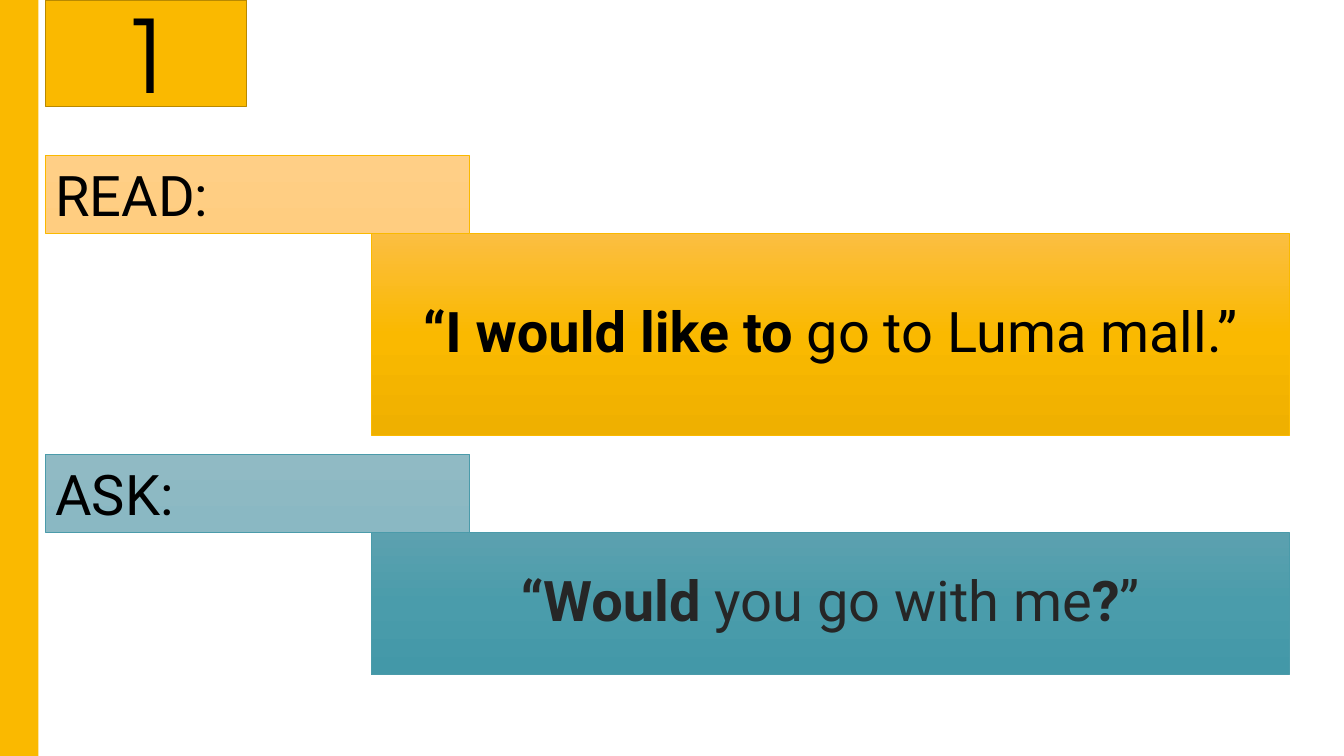
from dataclasses import dataclass

from lxml import etree
from pptx import Presentation
from pptx import util as u
from pptx.dml.color import RGBColor
from pptx.enum import shapes, text
from pptx.oxml import ns


@dataclass(frozen=True)
class Theme:
    amber: str = "FAB900"
    amber_edge: str = "B98900"
    teal_edge: str = "4B9BAA"
    black: str = "000000"
    charcoal: str = "262626"
    read_label: tuple = ("FFCF86", "FFCD80")
    read_panel: tuple = ("FBBE41", "FAB900", "EFB000")
    ask_label: tuple = ("90BAC4", "8AB8C3")
    ask_panel: tuple = ("5CA1AF", "4A9CAB", "4398A8")
    number_font: str = "TeX Gyre Adventor"
    body_font: str = "Roboto"
    number_size: int = 72
    body_size: int = 40


THEME = Theme()


def place(shape, box):
    shape.left, shape.top, shape.width, shape.height = (u.Cm(length) for length in box)


def add_rectangle(slide, box):
    shape = slide.shapes.add_shape(shapes.MSO_SHAPE.RECTANGLE, *(u.Cm(length) for length in box))
    shape.shadow.inherit = False
    return shape


def paint(shape, colors, edge=None, edge_width=0.5):
    if len(colors) == 1:
        shape.fill.solid()
        shape.fill.fore_color.rgb = RGBColor.from_string(colors[0])
    else:
        shape.fill.gradient()
        shape.fill.gradient_angle = 270
        stops = shape._element.spPr.find(".//" + ns.qn("a:gsLst"))
        for stop in list(stops):
            stops.remove(stop)
        for index, color in enumerate(colors):
            position = str(100000 * index // (len(colors) - 1))
            stop = etree.SubElement(stops, ns.qn("a:gs"), pos=position)
            etree.SubElement(stop, ns.qn("a:srgbClr"), val=color)
    if edge:
        shape.line.color.rgb = RGBColor.from_string(edge)
        shape.line.width = u.Pt(edge_width)
    else:
        shape.line.fill.background()


def write(shape, runs, color, align, anchor, font=THEME.body_font, size=THEME.body_size,
          inset=None, spacing=1.0):
    frame = shape.text_frame
    frame.word_wrap = True
    frame.auto_size = text.MSO_AUTO_SIZE.NONE
    frame.vertical_anchor = anchor
    if inset is not None:
        frame.margin_left = frame.margin_right = u.Cm(inset)
        frame.margin_top = frame.margin_bottom = u.Cm(inset)
    paragraph = frame.paragraphs[0]
    paragraph.alignment = align
    paragraph.line_spacing = spacing
    for words, bold in runs:
        run = paragraph.add_run()
        run.text = words
        run.font.name = font
        run.font.size = u.Pt(size)
        run.font.bold = bold
        run.font.color.rgb = RGBColor.from_string(color)


def add_side_band(slide, box):
    paint(add_rectangle(slide, box), [THEME.amber])


def add_number(slide, box, number):
    shape = add_rectangle(slide, box)
    paint(shape, [THEME.amber], THEME.amber_edge, 1)
    write(shape, [(number, False)], THEME.black, text.PP_ALIGN.CENTER,
          text.MSO_ANCHOR.MIDDLE, THEME.number_font, THEME.number_size)


def add_prompt(slide, box, label, runs, label_colors, panel_colors, edge, color, panel=None):
    left, top, width, height = box
    label_width, label_height, indent = 10.69, 1.97, 8.2
    tab = add_rectangle(slide, (left, top, label_width, label_height))
    paint(tab, label_colors, edge)
    write(tab, [(label, False)], THEME.black, text.PP_ALIGN.LEFT, text.MSO_ANCHOR.TOP)

    panel_box = (left + indent, top + label_height, width - indent, height - label_height)
    if panel is None:
        panel = add_rectangle(slide, panel_box)
    else:
        place(panel, panel_box)
    paint(panel, panel_colors, edge)
    write(panel, runs, color, text.PP_ALIGN.CENTER, text.MSO_ANCHOR.MIDDLE,
          inset=0.5, spacing=0.9)


def build_dialogue_slide(presentation):
    slide = presentation.slides.add_slide(presentation.slide_layouts[5])
    left, width = 1.15, 31.34
    add_side_band(slide, (-0.05, 0, 1.02, 19.1))
    add_number(slide, (left, 0, 5.06, 2.68), "1")
    add_prompt(slide, (left, 3.92, width, 7.05), "READ:",
               [("“I would like to", True), (" go to Luma mall.”", False)],
               THEME.read_label, THEME.read_panel, THEME.amber, THEME.black,
               slide.shapes.title)
    add_prompt(slide, (left, 11.45, width, 5.55), "ASK:",
               [("“Would", True), (" you go with me", False), ("?", True), ("”", False)],
               THEME.ask_label, THEME.ask_panel, THEME.teal_edge, THEME.charcoal)


def main():
    presentation = Presentation()
    presentation.slide_width = u.Cm(33.87)
    presentation.slide_height = u.Cm(19.05)
    build_dialogue_slide(presentation)
    presentation.save("out.pptx")


if __name__ == "__main__":
    main()
